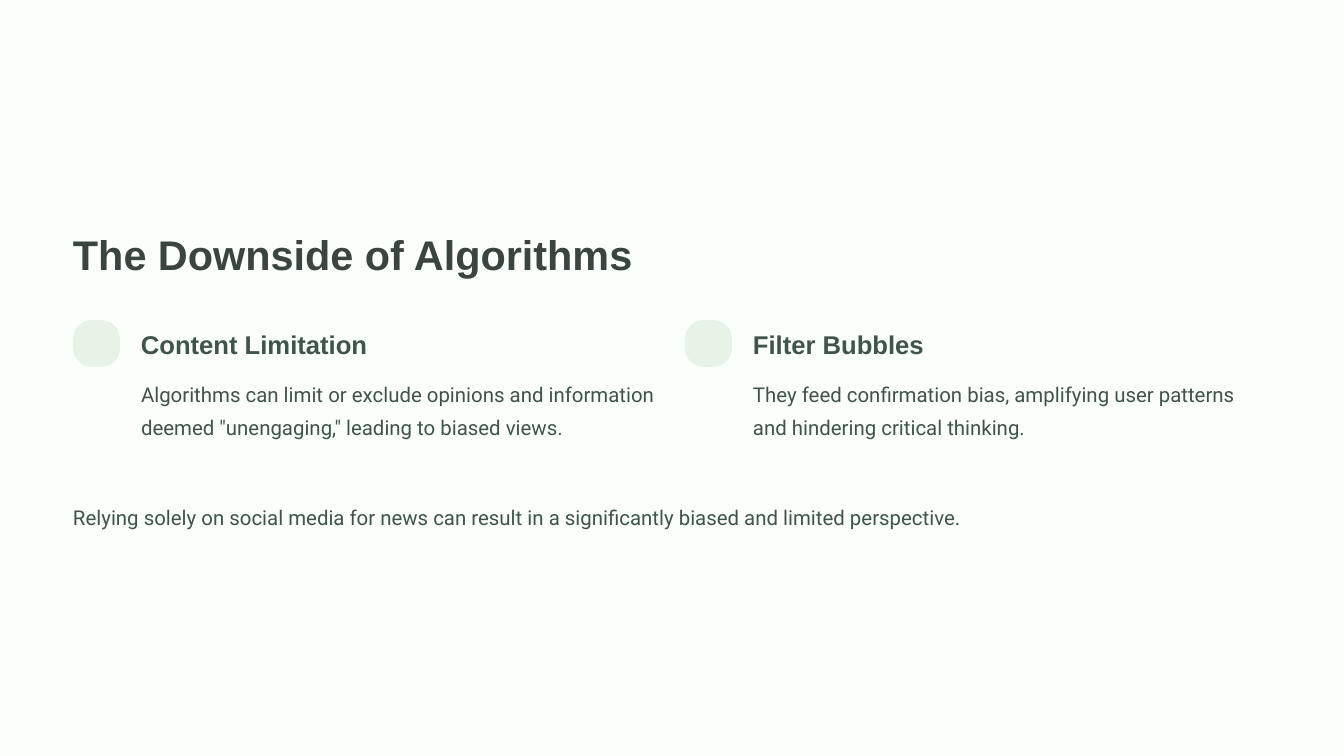
from pptx import Presentation
from pptx.dml.color import RGBColor
from pptx.enum.shapes import MSO_SHAPE
from pptx.enum.text import MSO_ANCHOR, MSO_AUTO_SIZE, PP_ALIGN
from pptx.util import Inches, Pt

HEADING = "The Downside of Algorithms"
DOWNSIDES = [
    ("Content Limitation",
     'Algorithms can limit or exclude opinions and information deemed "unengaging," leading to biased views.'),
    ("Filter Bubbles",
     "They feed confirmation bias, amplifying user patterns and hindering critical thinking."),
]
CONCLUSION = ("Relying solely on social media for news can result in a significantly "
              "biased and limited perspective.")

BACKGROUND, BADGE_FILL = "FAFFFA", "E8F3E8"
HEADING_COLOR, TEXT_COLOR = "3B4540", "405449"
SUBHEAD_STYLE = dict(size=22, leading=27.5, font="Arial", color=TEXT_COLOR, bold=True, wrap=False)
BODY_STYLE = dict(size=17.5, leading=28.5, font="Roboto", color=TEXT_COLOR)

MARGIN = 73
COLUMN_PITCH = 612
BADGE_SIZE = 47
TEXT_INDENT = 68


def px(length):
    return round(length * Inches(1) / 84)


def rgb(value):
    return RGBColor.from_string(value)


def place(shape, left, top, width, height):
    shape.left, shape.top = px(left), px(top)
    shape.width, shape.height = px(width), px(height)


def write(text, box, holder=None, *, size, leading, font, color, bold=False, wrap=True):
    if holder is None:
        holder = slide.shapes.add_textbox(0, 0, 0, 0)
    place(holder, *box)
    frame = holder.text_frame
    frame.margin_left = frame.margin_top = frame.margin_right = frame.margin_bottom = 0
    frame.auto_size = MSO_AUTO_SIZE.NONE
    frame.vertical_anchor = MSO_ANCHOR.TOP
    frame.word_wrap = wrap
    paragraph = frame.paragraphs[0]
    paragraph.alignment = PP_ALIGN.LEFT
    paragraph.line_spacing = Pt(leading)
    paragraph.space_before = Pt(0)
    run = paragraph.add_run()
    run.text = text
    run.font.name = font
    run.font.size = Pt(size)
    run.font.bold = bold
    run.font.color.rgb = rgb(color)


def add_badge(left, top):
    badge = slide.shapes.add_shape(MSO_SHAPE.ROUNDED_RECTANGLE, 0, 0, 0, 0)
    place(badge, left, top, BADGE_SIZE, BADGE_SIZE)
    badge.adjustments[0] = 0.4
    badge.shadow.inherit = False
    badge.fill.solid()
    badge.fill.fore_color.rgb = rgb(BADGE_FILL)
    badge.line.fill.background()


presentation = Presentation()
presentation.slide_width, presentation.slide_height = px(1344), px(756)
slide = presentation.slides.add_slide(presentation.slide_layouts[5])
slide.background.fill.solid()
slide.background.fill.fore_color.rgb = rgb(BACKGROUND)

write(HEADING, (MARGIN, 227, 603, 52), slide.shapes.title,
      size=35.5, leading=44.5, font="Arial", color=HEADING_COLOR, bold=True, wrap=False)

for column, (subhead, explanation) in enumerate(DOWNSIDES):
    badge_left = MARGIN + column * COLUMN_PITCH
    text_left = badge_left + TEXT_INDENT
    add_badge(badge_left, 320)
    write(subhead, (text_left, 328, 260, 33), **SUBHEAD_STYLE)
    write(explanation, (text_left, 373, 518, 67), **BODY_STYLE)

write(CONCLUSION, (MARGIN, 496, 1198, 34), wrap=False, **BODY_STYLE)

presentation.save("out.pptx")
